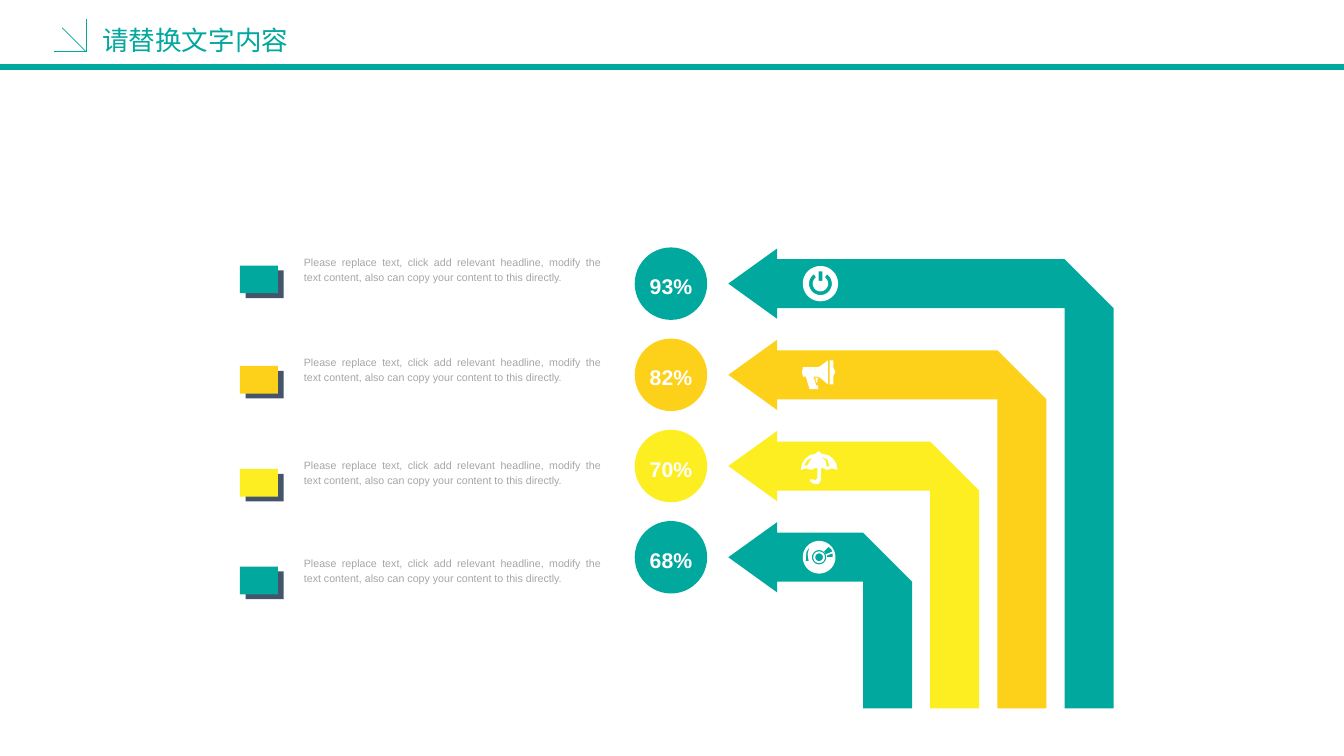
import math

from lxml import etree
from pptx import Presentation
from pptx.dml.color import RGBColor
from pptx.enum import shapes, text
from pptx.oxml import ns
from pptx.util import Pt

TEAL = RGBColor(0x01, 0xA8, 0x9E)
GOLD = RGBColor(0xFD, 0xD0, 0x1A)
YELLOW = RGBColor(0xFD, 0xEE, 0x21)
NAVY = RGBColor(0x44, 0x54, 0x6A)
GREY = RGBColor(0xA6, 0xA6, 0xA6)
WHITE = RGBColor(0xFF, 0xFF, 0xFF)


def arc(x, y, radius, start=0, end=360):
    """Points along an arc, in degrees clockwise from the right."""
    steps = 48
    angles = [math.radians(start + (end - start) * i / steps) for i in range(steps + 1)]
    return [(x + radius * math.cos(a), y + radius * math.sin(a)) for a in angles]


# Content
TITLE = "请替换文字内容"
NOTE = ("Please replace text, click add relevant headline, modify the text content, "
        "also can copy your content to this directly.")

# Icon outlines, measured from the icon centre; inner outlines cut holes
POWER = [
    arc(1, 0, 13.3),
    arc(1, 0, 8.6, -55, 235) + arc(1, 0, 5.8, 235, -55),
    [(-0.4, -9.3), (2.4, -9.3), (2.4, -2), (-0.4, -2)],
]
MEGAPHONE = [
    [(-12.2, -5.8), (-0.7, -5.8), (0.7, -6.5), (6.5, -10.8), (6.5, 7.2), (0.7, 2.2),
     (-0.7, 1.4), (-4.3, 1.4), (-2.2, 7.9), (-0.7, 7.9), (-0.7, 10.8), (-7.2, 10.8),
     (-10.1, 1.4), (-12.2, 1.4), (-13, -2.2)],
    [(7.9, -10.8), (10.8, -10.8), (10.8, -5), (12.2, -2.2), (10.8, 0.7), (10.8, 7.2),
     (7.9, 7.2)],
    [(-0.7, 2.2), (-2.9, 2.2), (-2.2, 5.8), (-1.4, 5.8), (-1.4, 4.3)],
]
UMBRELLA = [
    [(-13.7, 2.9), (-13, -1.5), (-10.6, -5.4), (-7, -8.2), (-2.2, -9.4), (-1.4, -10.8),
     (0.7, -10.8), (1.4, -9.4), (7, -8.2), (10.6, -5.4), (13, -1.5), (13.7, 2.9),
     (9.7, 1.8), (5.8, 2.9), (3.6, 1.8), (1.4, 1.4), (1.4, 9.4), (0.9, 12), (-0.7, 13.4),
     (-2.2, 13.7), (-4.3, 13.2), (-6.3, 12), (-7.2, 10.1), (-4.3, 10.1), (-3.6, 10.8),
     (-2.9, 10.8), (-2.2, 10.1), (-1.4, 9.4), (-1.4, 1.4), (-3.6, 1.8), (-5.8, 2.9),
     (-9.7, 1.8)],
    [(5.8, 0.7), (7.9, 0), (6.2, -4.8), (1.4, -7.2), (4.7, -4)],
    [(-11.5, 0), (-8.6, -0.7), (-7, -3.9), (-5, -6.5), (-9, -4.5)],
]
DISC = [
    *[arc(0, 0, radius) for radius in (12.3, 5.4, 4.4, 2.9)],
    [(-7.2, -7.9), (-9.6, -4), (-10.1, 2.9), (-7.9, 2.9), (-8.6, -2.5)],
    [(3.6, -4.3), (5, -2.2), (10.1, -4.3), (9.2, -6), (7.2, -7.9)],
    [(10.1, -2.9), (5.8, -1.4), (5.8, 0), (10.1, 0)],
]
# Percentage, colour, icon, top of its note
ITEMS = [
    ("93%", TEAL, POWER, 187.2),
    ("82%", GOLD, MEGAPHONE, 262.8),
    ("70%", YELLOW, UMBRELLA, 340.4),
    ("68%", TEAL, DISC, 414),
]
HEADER_LINES = [  # x1, y1, x2, y2, weight
    (0, 50.4, 1012.32, 50.4, 4.5),
    (41, 38.9, 64.8, 38.9, 0.5),
    (64.8, 38.9, 64.8, 14.4, 0.5),
    (64.8, 38.9, 46.8, 20.9, 0.5),
]

# Layout
FIRST_ROW, ROW_STEP = 213.7, 68.7
RIGHT_EDGE, COLUMN_STEP, BOTTOM = 838.8, 50.6, 533.6
TIP, HEAD_BASE, HALF_HEAD, BAND = 548.6, 585.4, 26.5, 36.9
ICON_X = 617
CIRCLE_X, CIRCLE = 505.4, 54.6
SWATCH_X, SWATCH_DROP, SWATCH_W, SWATCH_H = 180.7, 12.8, 28.6, 20.9

deck = Presentation()
deck.slide_width, deck.slide_height = Pt(1012.32), Pt(569.52)
slide = deck.slides.add_slide(deck.slide_layouts[6])


def paint(part, colour):
    part.shadow.inherit = False
    part.fill.solid()
    part.fill.fore_color.rgb = colour
    part.line.fill.background()
    return part


def add_preset(kind, x, y, w, h, colour):
    return paint(slide.shapes.add_shape(kind, Pt(x), Pt(y), Pt(w), Pt(h)), colour)


def add_outline(contours, colour, x=0, y=0):
    placed = [[(Pt(x + px), Pt(y + py)) for px, py in contour] for contour in contours]
    builder = slide.shapes.build_freeform(*placed[0][0])
    builder.add_line_segments(placed[0][1:])
    for contour in placed[1:]:
        builder.move_to(*contour[0])
        builder.add_line_segments(contour[1:])
    return paint(builder.convert_to_shape(), colour)


def write(part, words, align, colour, frame_format, font_format):
    frame = part.text_frame
    for key, value in frame_format.items():
        setattr(frame, key, value)
    paragraph = frame.paragraphs[0]
    paragraph.alignment, paragraph.line_spacing = align, 1.2
    run = paragraph.add_run()
    run.text = words
    run.font.color.rgb = colour
    for key, value in {"name": "Arial", **font_format}.items():
        setattr(run.font, key, value)


# Header
for x1, y1, x2, y2, weight in HEADER_LINES:
    rule = slide.shapes.add_connector(
        shapes.MSO_CONNECTOR.STRAIGHT, Pt(x1), Pt(y1), Pt(x2), Pt(y2))
    rule.line.color.rgb, rule.line.width = TEAL, Pt(weight)
    etree.SubElement(rule._element.spPr, ns.qn("a:effectLst"))
title = slide.shapes.add_textbox(Pt(69.8), Pt(10.8), Pt(170), Pt(33.8))
write(title, TITLE, text.PP_ALIGN.LEFT, TEAL,
      {"word_wrap": True, "vertical_anchor": text.MSO_ANCHOR.MIDDLE}, {"size": Pt(20)})

for i, (percent, colour, icon, note_top) in enumerate(ITEMS):
    row = FIRST_ROW + i * ROW_STEP

    # Percentage circle
    circle = add_preset(shapes.MSO_SHAPE.OVAL, CIRCLE_X - CIRCLE / 2, row - CIRCLE / 2,
                        CIRCLE, CIRCLE, colour)
    write(circle, percent, text.PP_ALIGN.CENTER, WHITE,
          {"word_wrap": False, "vertical_anchor": text.MSO_ANCHOR.MIDDLE},
          {"size": Pt(16), "bold": True})

    # Bent arrow and its icon
    right = RIGHT_EDGE - i * COLUMN_STEP
    left, top, under = right - BAND, row - BAND / 2, row + BAND / 2
    add_outline([[(TIP, row), (HEAD_BASE, row - HALF_HEAD), (HEAD_BASE, top), (left, top),
                  (right, under), (right, BOTTOM), (left, BOTTOM), (left, under),
                  (HEAD_BASE, under), (HEAD_BASE, row + HALF_HEAD)]], colour)
    add_outline(icon, WHITE, ICON_X, row)

    # Swatch over its offset backing, with the note
    swatch_top = note_top + SWATCH_DROP
    for dx, dy, shade in ((4.3, 3.7, NAVY), (0, 0, colour)):
        add_preset(shapes.MSO_SHAPE.RECTANGLE, SWATCH_X + dx, swatch_top + dy,
                   SWATCH_W, SWATCH_H, shade)
    note = slide.shapes.add_textbox(Pt(221.8), Pt(note_top), Pt(238.3), Pt(29.5))
    write(note, NOTE, text.PP_ALIGN.JUSTIFY, GREY,
          {"word_wrap": True, "auto_size": text.MSO_AUTO_SIZE.SHAPE_TO_FIT_TEXT},
          {"size": Pt(8)})

deck.save("out.pptx")
